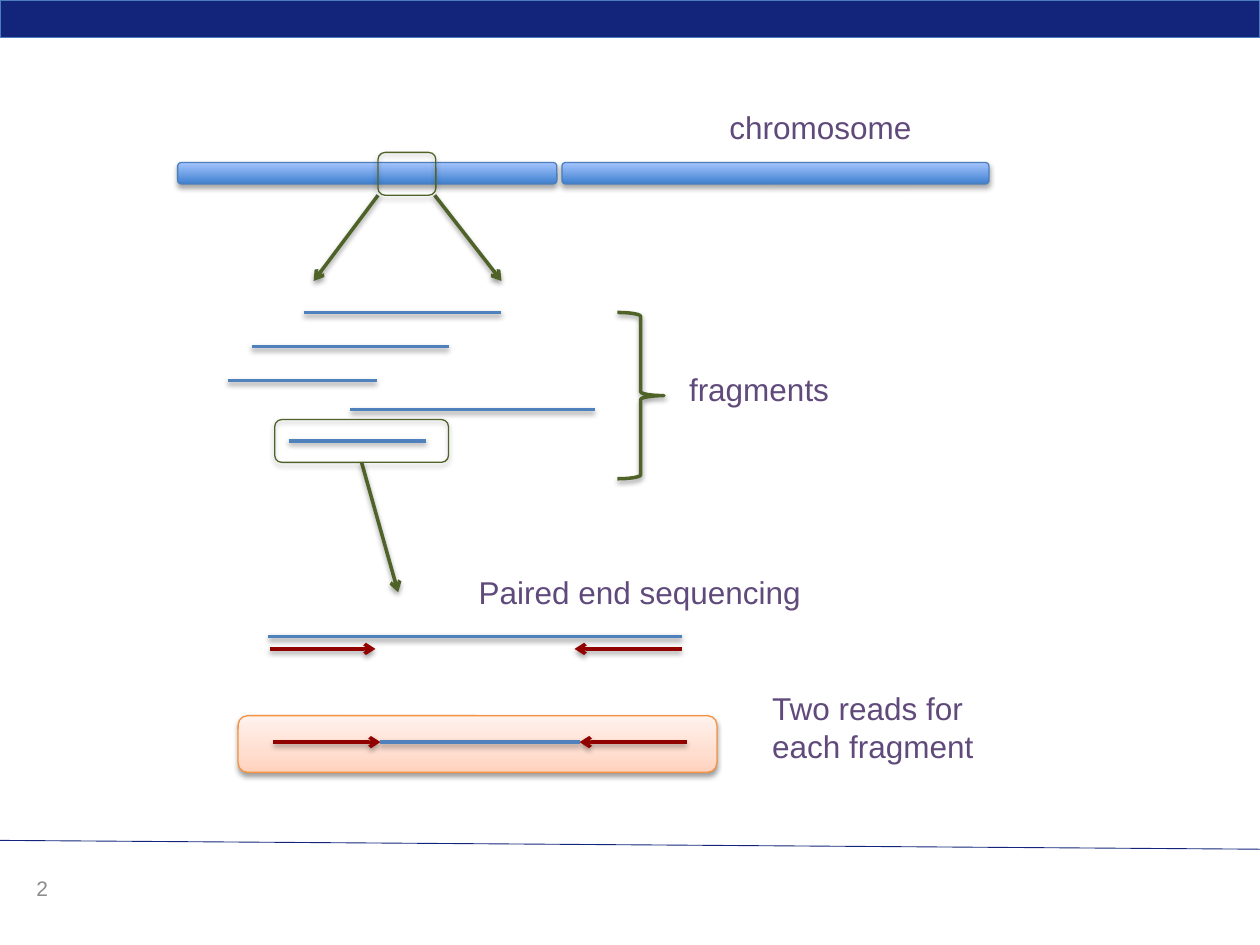
from dataclasses import dataclass

from pptx import Presentation
from pptx.dml.color import RGBColor
from pptx.enum.shapes import MSO_CONNECTOR, MSO_SHAPE
from pptx.enum.text import MSO_AUTO_SIZE
from pptx.oxml import parse_xml
from pptx.oxml.ns import nsdecls, qn
from pptx.util import Inches, Pt


@dataclass(frozen=True)
class Theme:
    font: str = "Arial"
    label_size: int = 18
    number_size: int = 12
    label: str = "604A7B"
    number: str = "8C8C8C"
    navy: str = "13257B"
    edge: str = "4B7EBC"
    strand: str = "4F81BD"
    green: str = "4F6228"
    read: str = "900100"
    orange: str = "F69240"
    chromosome: tuple = ((0, "3F80CE"), (100, "A4C4FF"))
    panel: tuple = ((0, "FFD2BD"), (35, "FFDED0"), (100, "FFF2ED"))
    thin: float = 0.75
    thick: float = 2
    box_shadow: tuple = (35, 3.1, 1.8)
    line_shadow: tuple = (38, 3.1, 1.6)


THEME = Theme()
COLUMNS, ROWS = 100, 75

HEADER = (0, 0, 100, 3)
FOOTER_RULE = (100, 67.4, 0, 66.7)
CHROMOSOME_ARMS = [(44.6, 12.9, 33.9, 1.7), (14.1, 12.9, 30.1, 1.7)]
FRAGMENTS = [(24.1, 39.8, 24.8), (18.1, 29.9, 30.2), (20, 35.6, 27.5),
             (27.8, 47.2, 32.5), (22.9, 33.8, 35)]
REGION = (30, 12.1, 4.6, 3.4)
ZOOM_ARROWS = [(30, 15.5, 24.9, 22.3), (34.5, 15.5, 39.8, 22.3)]
CHOSEN_FRAGMENT = (21.8, 33.3, 13.8, 3.4)
SEQUENCING_ARROW = (28.7, 36.7, 31.6, 47)
SEQUENCED_STRAND = (21.3, 54.1, 50.5)
READS = [(54.1, 45.6, 51.5), (21.4, 29.8, 51.5)]
PAIR_PANEL = (18.9, 56.8, 38, 4.5)
PAIR_READS = [(54.5, 46, 58.9), (21.7, 30.2, 58.9)]
PAIR_GAP = (30.2, 46, 58.9)
BRACE = (49, 24.8, 3.7, 13.2)
LABELS = [
    ("chromosome", (56.9, 8.1, 16.6, 4), False),
    ("Paired end sequencing", (37, 45, 27.8, 4), False),
    ("Two reads for each fragment", (60.3, 54.2, 22, 7.1), True),
    ("fragments", (53.7, 28.9, 13.2, 4), False),
]
PAGE_NUMBER = ("2", (1.9, 69, 4.5, 4))

deck = Presentation()
deck.slide_width, deck.slide_height = Inches(10), Inches(7.5)
slide = deck.slides.add_slide(deck.slide_layouts[6])


def place(cells):
    units = (deck.slide_width / COLUMNS, deck.slide_height / ROWS) * 2
    return [round(cell * unit) for cell, unit in zip(cells, units)]


def set_effects(item, shadow):
    effects = parse_xml(f"<a:effectLst {nsdecls('a')}/>")
    if shadow:
        alpha, blur, distance = shadow
        effects.append(parse_xml(
            f'<a:outerShdw {nsdecls("a")} blurRad="{Pt(blur)}" dist="{Pt(distance)}" '
            f'dir="5400000" rotWithShape="0"><a:srgbClr val="000000">'
            f'<a:alpha val="{alpha * 1000}"/></a:srgbClr></a:outerShdw>'))
    item._element.spPr.append(effects)


def set_line(item, color, width):
    item.line.color.rgb = RGBColor.from_string(color)
    item.line.width = Pt(width)


def set_gradient(item, stops):
    stop_xml = "".join(
        f'<a:gs pos="{position * 1000}"><a:srgbClr val="{color}"/></a:gs>'
        for position, color in stops)
    gradient = parse_xml(
        f'<a:gradFill {nsdecls("a")} rotWithShape="1"><a:gsLst>{stop_xml}</a:gsLst>'
        f'<a:lin ang="16200000" scaled="0"/></a:gradFill>')
    properties = item._element.spPr
    properties.replace(properties.find(qn("a:noFill")), gradient)


def add_outline(cells, color, kind=MSO_SHAPE.ROUNDED_RECTANGLE, width=THEME.thin,
                gradient=None, shadow=THEME.box_shadow):
    outline = slide.shapes.add_shape(kind, *place(cells))
    outline.fill.background()
    if gradient:
        set_gradient(outline, gradient)
    set_line(outline, color, width)
    set_effects(outline, shadow)
    return outline


def add_line(cells, color, width=THEME.thick, arrow=False, shadow=THEME.line_shadow):
    line = slide.shapes.add_connector(MSO_CONNECTOR.STRAIGHT, *place(cells))
    set_line(line, color, width)
    if arrow:
        line._element.spPr.find(qn("a:ln")).append(
            parse_xml(f'<a:tailEnd {nsdecls("a")} type="arrow"/>'))
    set_effects(line, shadow)
    return line


def add_level(start, end, row, color, arrow=False):
    return add_line((start, row, end, row), color, arrow=arrow)


def add_text(text, cells, color, size, wrap=True, grow=False):
    box = slide.shapes.add_textbox(*place(cells))
    frame = box.text_frame
    frame.text = text
    frame.word_wrap = wrap
    if grow:
        frame.auto_size = MSO_AUTO_SIZE.SHAPE_TO_FIT_TEXT
    font = frame.paragraphs[0].runs[0].font
    font.name, font.size = THEME.font, Pt(size)
    font.color.rgb = RGBColor.from_string(color)


header = add_outline(HEADER, THEME.edge, MSO_SHAPE.RECTANGLE, shadow=None)
header.fill.solid()
header.fill.fore_color.rgb = RGBColor.from_string(THEME.navy)
add_line(FOOTER_RULE, THEME.navy, 0.5, shadow=None)

for arm in CHROMOSOME_ARMS:
    add_outline(arm, THEME.edge, gradient=THEME.chromosome)
for fragment in FRAGMENTS:
    add_level(*fragment, THEME.strand)
for zoom_arrow in ZOOM_ARROWS:
    add_line(zoom_arrow, THEME.green, arrow=True)
add_outline(REGION, THEME.green)

add_level(*SEQUENCED_STRAND, THEME.strand)
for read in READS:
    add_level(*read, THEME.read, arrow=True)
sequencing_arrow = add_line(SEQUENCING_ARROW, THEME.green, arrow=True)
chosen_fragment = add_outline(CHOSEN_FRAGMENT, THEME.green)
sequencing_arrow.begin_connect(chosen_fragment, 2)

add_outline(PAIR_PANEL, THEME.orange, gradient=THEME.panel, shadow=THEME.line_shadow)
for read in PAIR_READS:
    add_level(*read, THEME.read, arrow=True)
add_level(*PAIR_GAP, THEME.strand)

add_outline(BRACE, THEME.green, MSO_SHAPE.RIGHT_BRACE, THEME.thick,
            shadow=THEME.line_shadow)
for text, cells, wrap in LABELS:
    add_text(text, cells, THEME.label, THEME.label_size, wrap, grow=True)
add_text(*PAGE_NUMBER, THEME.number, THEME.number_size)

deck.save("out.pptx")
